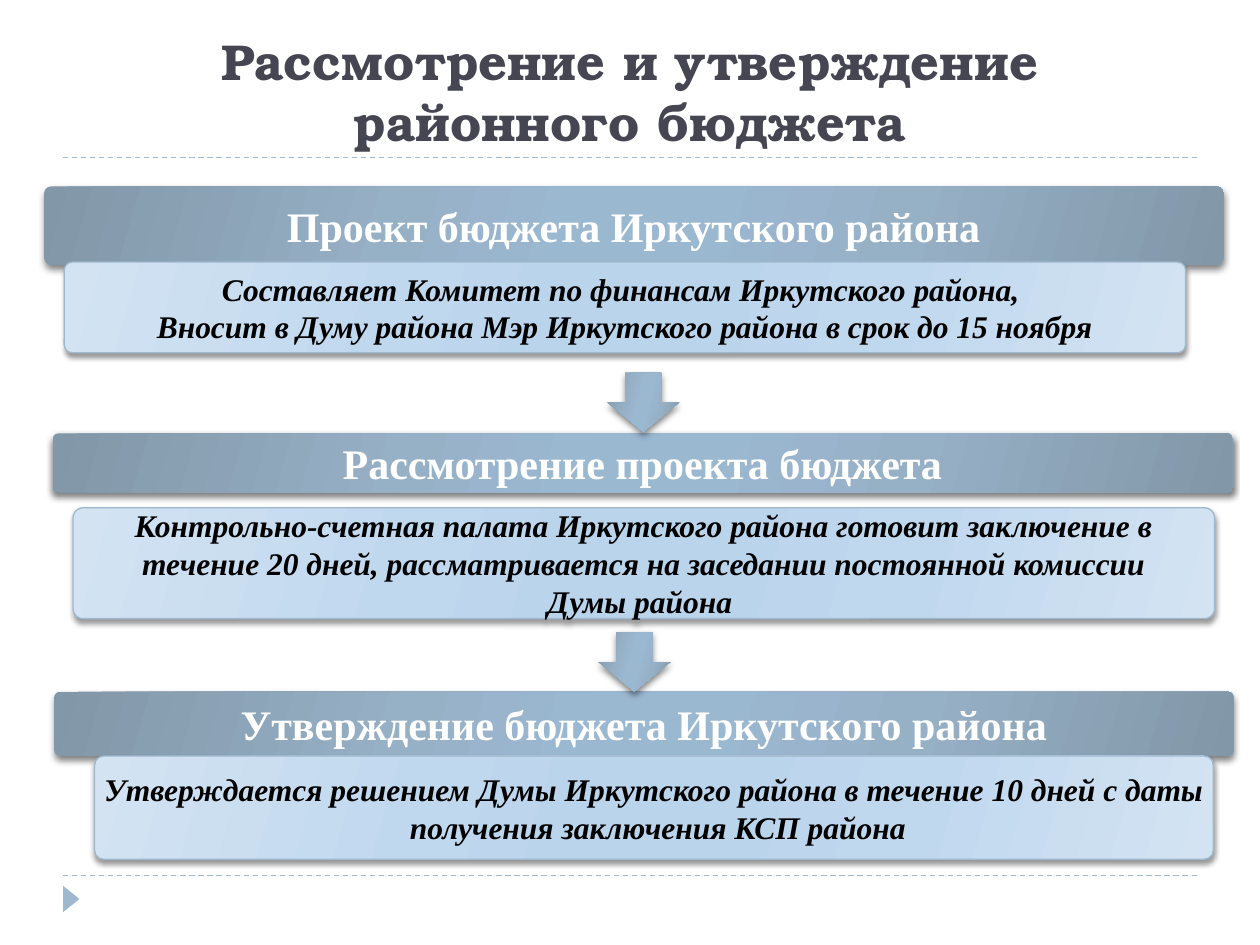
"""Builds a slide on how the district budget is reviewed and approved."""
import pptx
import pptx.dml.color
import pptx.enum.dml
import pptx.enum.shapes
import pptx.enum.text
import pptx.oxml
import pptx.oxml.ns
import pptx.util

RGB = pptx.dml.color.RGBColor
Inches = pptx.util.Inches
Pt = pptx.util.Pt
Kind = pptx.enum.shapes.MSO_SHAPE
Anchor = pptx.enum.text.MSO_ANCHOR
Align = pptx.enum.text.PP_ALIGN

DARK = RGB(0x46, 0x46, 0x53)
BLUE = RGB(0x9F, 0xB8, 0xCD)
WHITE = RGB(255, 255, 255)
BLACK = RGB(0, 0, 0)
STEEL = [RGB(0x82, 0x97, 0xA8), RGB(0x96, 0xB0, 0xC6), RGB(0x9B, 0xB8, 0xD1)]
PALE = [RGB(0xD3, 0xE3, 0xF2), RGB(0xC0, 0xD8, 0xEE), RGB(0xBA, 0xD4, 0xEC)]
STOPS = [(0, 0), (30, 1), (45, 2), (55, 2), (73, 1), (100, 0)]
SERIF = "Times New Roman"

TITLE = "Рассмотрение и утверждение районного бюджета"
RULES = [1.25, 6.95]
STAGES = [
    ("Проект бюджета Иркутского района", (0.35, 1.48, 9.36, 0.62),
     ["Составляет Комитет по финансам Иркутского района, ",
      "Вносит в Думу района Мэр Иркутского района в срок до 15 ноября"],
     (0.51, 2.08, 8.9, 0.72)),
    ("Рассмотрение проекта бюджета", (0.42, 3.44, 9.36, 0.47),
     ["Контрольно-счетная палата Иркутского района готовит заключение в",
      " течение 20 дней, рассматривается на заседании постоянной комиссии ",
      "Думы района "],
     (0.58, 4.03, 9.06, 0.88)),
    ("Утверждение бюджета Иркутского района", (0.43, 5.49, 9.36, 0.51),
     ["Утверждается решением Думы Иркутского района в течение 10 дней с даты",
      " получения заключения КСП района"],
     (0.75, 6, 8.88, 0.82)),
]
ARROWS = [(4.82, 2.96, 0.57, 0.47), (4.75, 5.02, 0.57, 0.47)]


def write(frame, lines, font, size, color, slant=None):
    for i, line in enumerate(lines):
        para = frame.paragraphs[0] if i == 0 else frame.add_paragraph()
        para.alignment = Align.CENTER
        run = para.add_run()
        run.text = line
        run.font.name = font
        run.font.size = Pt(size)
        run.font.bold = True
        run.font.italic = slant
        run.font.color.rgb = color


def shade(shape, tones):
    stops = "".join(
        f'<a:gs pos="{at * 1000}"><a:srgbClr val="{tones[i]}"/></a:gs>'
        for at, i in STOPS)
    shape.fill.background()
    old = shape._element.spPr.find(pptx.oxml.ns.qn("a:noFill"))
    new = pptx.oxml.parse_xml(
        f'<a:gradFill {pptx.oxml.ns.nsdecls("a")} rotWithShape="1">'
        f'<a:gsLst>{stops}</a:gsLst><a:lin ang="{16 * 60000}" scaled="0"/>'
        '</a:gradFill>')
    shape._element.spPr.replace(old, new)


def glow(shape, alpha, blur):
    shape.shadow.inherit = False
    shape._element.spPr.find(pptx.oxml.ns.qn("a:effectLst")).append(
        pptx.oxml.parse_xml(
            f'<a:outerShdw {pptx.oxml.ns.nsdecls("a")} blurRad="{Pt(blur)}" '
            f'dist="{Pt(2)}" dir="{90 * 60000}" rotWithShape="0">'
            f'<a:srgbClr val="000000"><a:alpha val="{alpha * 1000}"/>'
            '</a:srgbClr></a:outerShdw>'))


def block(slide, kind, place, tones, edge=None):
    shape = slide.shapes.add_shape(kind, *map(Inches, place))
    shade(shape, tones)
    if edge:
        shape.line.color.rgb = edge
        shape.line.width = Pt(0.75)
        glow(shape, 40, 3)
    else:
        shape.line.fill.background()
        glow(shape, 50, 4)
    return shape


def panel(slide, place, tones, edge, lines, *style):
    shape = block(slide, Kind.ROUNDED_RECTANGLE, place, tones, edge)
    shape.adjustments[0] = 0.09
    frame = shape.text_frame
    frame.word_wrap = False
    frame.vertical_anchor = Anchor.MIDDLE
    write(frame, lines, SERIF, *style)


def frame_page(slide):
    for y in RULES:
        rule = slide.shapes.add_connector(
            pptx.enum.shapes.MSO_CONNECTOR.STRAIGHT,
            Inches(0.5), Inches(y), Inches(9.5), Inches(y))
        rule.line.color.rgb = BLUE
        rule.line.width = Pt(0.75)
        rule.line.dash_style = pptx.enum.dml.MSO_LINE.DASH
        rule._element.spPr.append(pptx.oxml.parse_xml(
            f'<a:effectLst {pptx.oxml.ns.nsdecls("a")}/>'))
    mark = slide.shapes.add_shape(
        Kind.ISOSCELES_TRIANGLE, *map(Inches, (0.46, 7.07, 0.21, 0.13)))
    mark.rotation = 90
    mark.shadow.inherit = False
    mark.fill.solid()
    mark.fill.fore_color.rgb = BLUE
    mark.line.fill.background()


def main():
    deck = pptx.Presentation()
    deck.slide_width, deck.slide_height = Inches(10), Inches(7.5)
    slide = deck.slides.add_slide(deck.slide_layouts[5])
    frame_page(slide)

    title = slide.shapes.title
    title.left, title.top = Inches(0.5), Inches(0.17)
    title.width, title.height = Inches(9), Inches(1.08)
    title.text_frame.word_wrap = True
    title.text_frame.vertical_anchor = Anchor.BOTTOM
    write(title.text_frame, [TITLE], "TeX Gyre Bonum", 28.8, DARK)

    for head, top, notes, body in STAGES:
        panel(slide, top, STEEL, None, [head], 24, WHITE)
        panel(slide, body, PALE, BLUE, notes, 18, BLACK, True)
    for place in ARROWS:
        block(slide, Kind.DOWN_ARROW, place, STEEL)
    deck.save("out.pptx")


if __name__ == "__main__":
    main()
